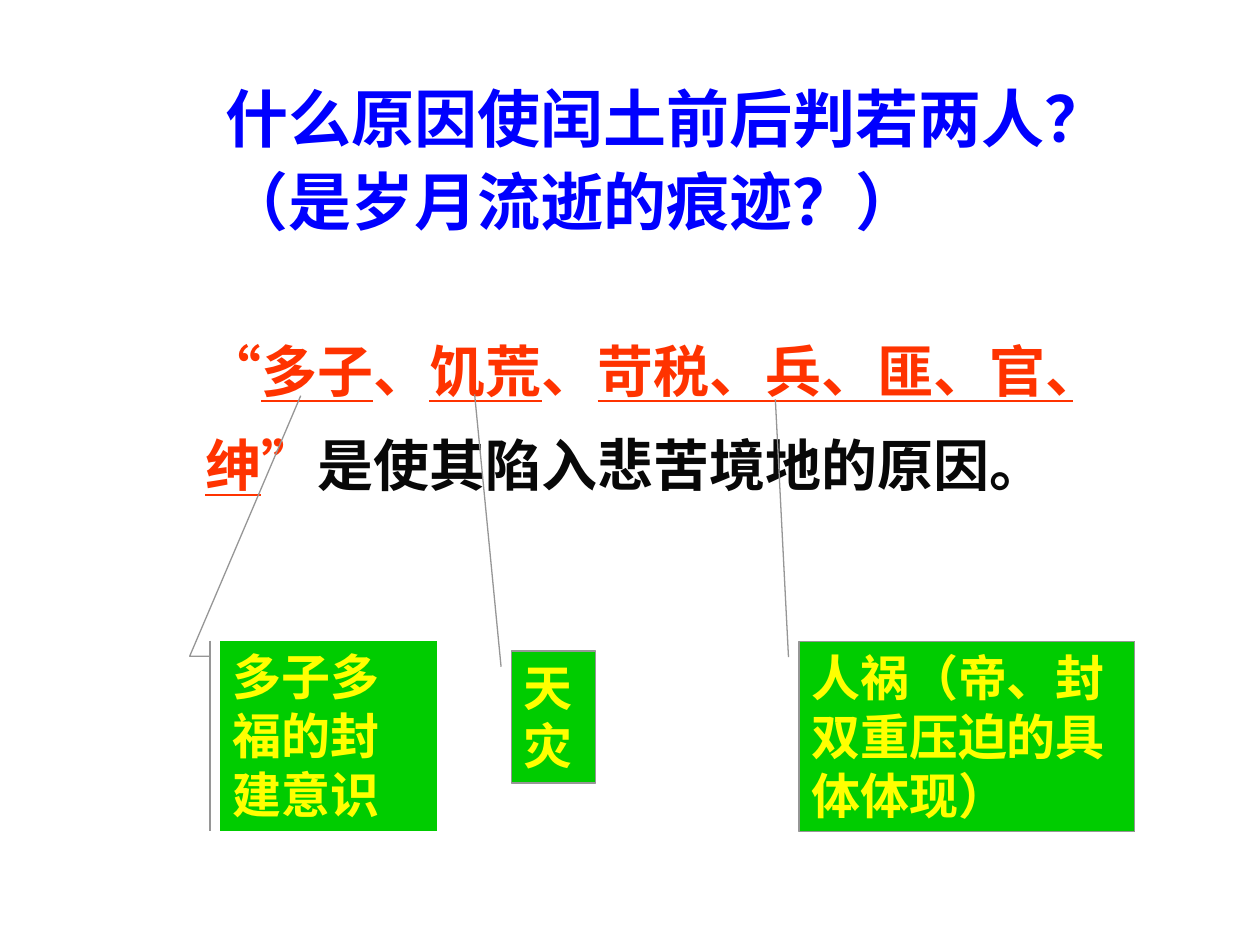
from dataclasses import dataclass

from pptx import Presentation
from pptx.dml.color import RGBColor
from pptx.enum.lang import MSO_LANGUAGE_ID
from pptx.enum.shapes import MSO_SHAPE
from pptx.enum.text import MSO_ANCHOR, PP_ALIGN
from pptx.util import Pt


@dataclass(frozen=True)
class Theme:
    """Colours, font and type sizes of the slide."""
    font: str = "Times New Roman"
    title_color: RGBColor = RGBColor(0x00, 0x00, 0xFF)
    quote_color: RGBColor = RGBColor(0xFF, 0x33, 0x00)
    body_color: RGBColor = RGBColor(0x08, 0x08, 0x08)
    callout_color: RGBColor = RGBColor(0xFF, 0xFF, 0x00)
    callout_fill: RGBColor = RGBColor(0x00, 0xCC, 0x00)
    callout_line: RGBColor = RGBColor(0x96, 0x96, 0x96)
    title_size: int = 36
    body_size: int = 32
    callout_size: int = 28


THEME = Theme()


def add_run(paragraph, text, size, color, underline=None):
    """Add one bold run to a paragraph."""
    run = paragraph.add_run()
    run.text = text
    font = run.font
    font.name = THEME.font
    font.size = Pt(size)
    font.bold = True
    font.underline = underline
    font.color.rgb = color
    font.language_id = MSO_LANGUAGE_ID.SIMPLIFIED_CHINESE


def add_text_paragraph(slide, box, line_spacing):
    """Place a wrapping text box and return its paragraph."""
    shape = slide.shapes.add_textbox(*map(Pt, box))
    shape.text_frame.word_wrap = True
    paragraph = shape.text_frame.paragraphs[0]
    paragraph.line_spacing = line_spacing
    return paragraph


def add_question(slide, box):
    """Place the question at the top of the slide."""
    paragraph = add_text_paragraph(slide, box, 1.1)
    add_run(paragraph, "什么原因使闰土前后判若两人？（是岁月流逝的痕迹？）",
            THEME.title_size, THEME.title_color)


def add_answer(slide, box):
    """Place the answer, with the quoted causes underlined."""
    paragraph = add_text_paragraph(slide, box, 1.4)
    quote = ["“", "多子", "、", "饥荒", "、", "苛税、兵、匪、官、绅", "”"]
    for index, text in enumerate(quote):
        add_run(paragraph, text, THEME.body_size, THEME.quote_color, index % 2 == 1)
    add_run(paragraph, "是使其陷入悲苦境地的原因。", THEME.body_size, THEME.body_color)


def add_callout(slide, box, preset, adjustments, text):
    """Place a green callout whose leader points at one cause."""
    shape = slide.shapes.add_shape(preset, *map(Pt, box))
    shape.shadow.inherit = False
    for index, value in enumerate(adjustments):
        shape.adjustments[index] = value
    shape.fill.solid()
    shape.fill.fore_color.rgb = THEME.callout_fill
    shape.line.color.rgb = THEME.callout_line
    shape.line.width = Pt(0.75)
    frame = shape.text_frame
    frame.word_wrap = True
    frame.vertical_anchor = MSO_ANCHOR.TOP
    paragraph = frame.paragraphs[0]
    paragraph.alignment = PP_ALIGN.LEFT
    add_run(paragraph, text, THEME.callout_size, THEME.callout_color)


def build_slide(presentation):
    """Build the question, the answer and its three explanations."""
    slide = presentation.slides.add_slide(presentation.slide_layouts[6])
    add_question(slide, (121.7, 37.5, 510, 102))
    add_answer(slide, (110.2, 173.5, 510, 168.5))
    callouts = [
        ((126, 366, 124, 108.7), MSO_SHAPE.LINE_CALLOUT_3_ACCENT_BAR,
         (0.083, -0.048, 0.083, -0.142, 0.083, -0.142, -1.287, 0.37),
         "多子多福的封建意识"),
        ((292.3, 372, 48, 75.4), MSO_SHAPE.LINE_CALLOUT_1,
         (0.12, -0.125, -1.944, -0.44), "天灾"),
        ((456.5, 366.5, 192, 108.7), MSO_SHAPE.LINE_CALLOUT_1,
         (0.083, -0.031, -1.272, -0.07), "人祸（帝、封双重压迫的具体体现）"),
    ]
    for callout in callouts:
        add_callout(slide, *callout)


def main():
    """Create and save the presentation."""
    presentation = Presentation()
    presentation.slide_width, presentation.slide_height = Pt(720), Pt(540)
    build_slide(presentation)
    presentation.save("out.pptx")


if __name__ == "__main__":
    main()
